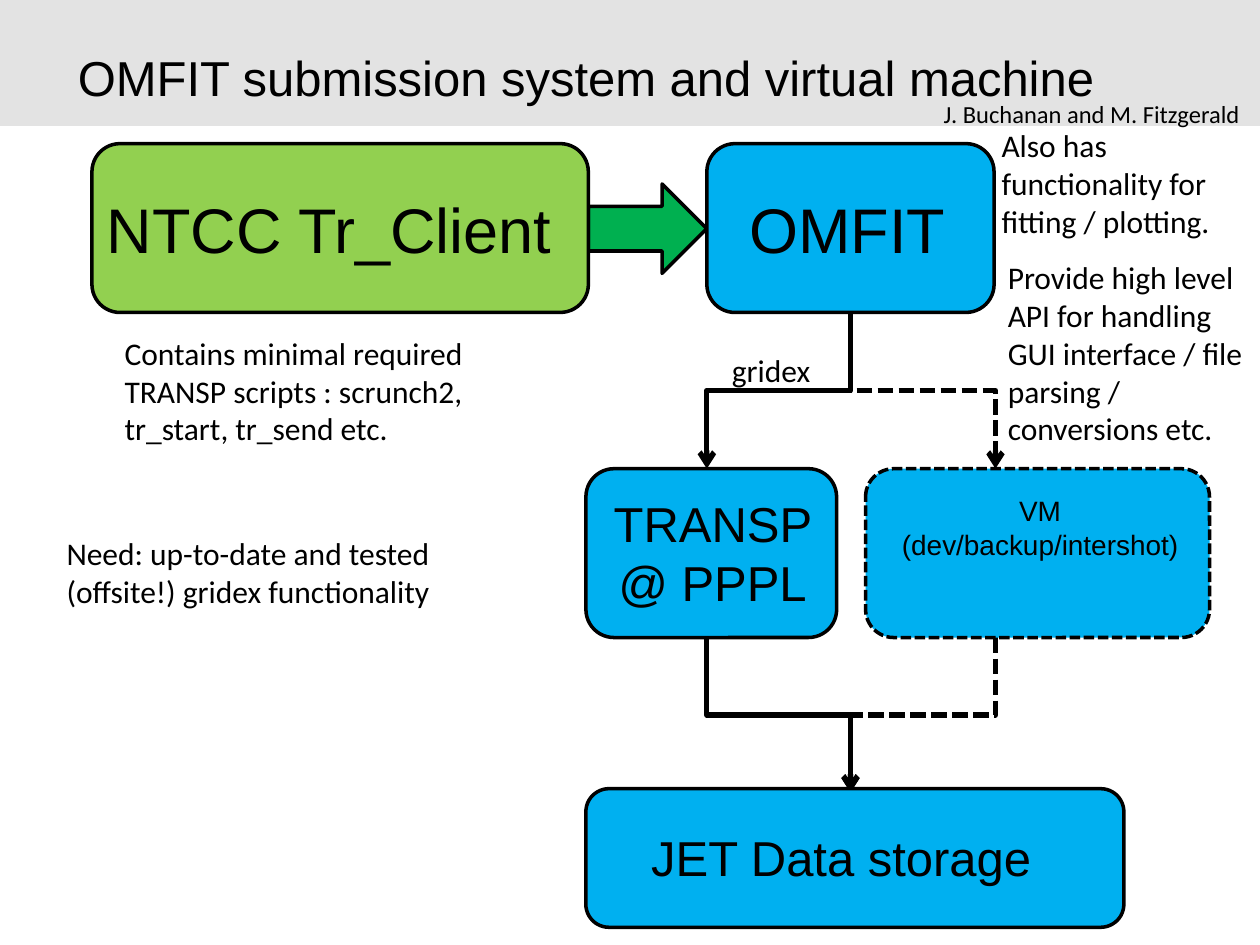
from lxml import etree
from pptx import Presentation
from pptx.dml.color import RGBColor
from pptx.enum.dml import MSO_LINE
from pptx.enum.shapes import MSO_CONNECTOR, MSO_SHAPE
from pptx.enum.text import MSO_ANCHOR, PP_ALIGN
from pptx.oxml.ns import qn
from pptx.util import Inches, Pt

BLACK = RGBColor(0x00, 0x00, 0x00)
GREY = RGBColor(0xE3, 0xE3, 0xE3)
BLUE = RGBColor(0x00, 0xB0, 0xF0)
LIME = RGBColor(0x92, 0xD0, 0x50)
GREEN = RGBColor(0x00, 0xB0, 0x50)
RECT, ROUNDED, ARROW = MSO_SHAPE.RECTANGLE, MSO_SHAPE.ROUNDED_RECTANGLE, MSO_SHAPE.RIGHT_ARROW
ELBOW, DASH = MSO_CONNECTOR.ELBOW, MSO_LINE.SQUARE_DOT
LEFT, CENTER = PP_ALIGN.LEFT, PP_ALIGN.CENTER
TOP, MIDDLE = MSO_ANCHOR.TOP, MSO_ANCHOR.MIDDLE

TITLE = ("OMFIT submission system and virtual machine", (0.52, 0, 9, 1.25))

# Flow steps: shape, box (left, top, width, height), fill, dashed outline
STEPS = [
    (ARROW, (4.67, 1.46, 0.94, 0.71), GREEN, False),
    (ROUNDED, (5.61, 1.14, 2.28, 1.34), BLUE, False),
    (ROUNDED, (0.73, 1.14, 3.94, 1.34), LIME, False),
    (ROUNDED, (4.65, 3.72, 1.99, 1.34), BLUE, False),
    (ROUNDED, (6.87, 3.72, 2.73, 1.34), BLUE, True),
    (ROUNDED, (4.65, 6.26, 4.27, 1.1), BLUE, False),
]

# Step labels: text, box, size, alignment
LABELS = [
    ("OMFIT", (5.85, 1.46, 1.81, 0.71), 36, LEFT),
    ("NTCC Tr_Client", (0.75, 1.46, 3.9, 0.71), 36, LEFT),
    ("TRANSP @ PPPL", (4.75, 3.87, 1.81, 1.04), 28, CENTER),
    ("VM (dev/backup/intershot)", (6.99, 3.87, 2.53, 0.64), 16, CENTER),
    ("JET Data storage", (5.07, 6.52, 3.39, 0.57), 28, LEFT),
]

# Side notes: text, box, size, wrap
NOTES = [
    ("Provide high level API for handling GUI interface / file parsing / conversions etc.",
     (7.9, 2, 2.13, 1.62), 18, True),
    ("Contains minimal required TRANSP scripts : scrunch2, tr_start, tr_send etc.",
     (0.89, 2.6, 3.62, 1.01), 18, True),
    ("Also has functionality for fitting / plotting.", (7.85, 0.95, 2.01, 1.31), 18, True),
    ("gridex", (5.71, 2.74, 0.88, 0.4), 18, False),
    ("Need: up-to-date and tested (offsite!) gridex functionality",
     (0.43, 4.19, 3.54, 0.71), 18, True),
    ("J. Buchanan and M. Fitzgerald", (7.39, 0.74, 2.57, 0.34), 14, False),
]

# Flow lines: start, end, dashed
TRANSP_X, HUB_X, VM_X = 5.61, 6.75, 7.9
FLOWS = [
    ((HUB_X, 2.48), (TRANSP_X, 3.72), False),
    ((HUB_X, 2.48), (VM_X, 3.72), True),
    ((TRANSP_X, 5.06), (HUB_X, 6.29), False),
    ((VM_X, 5.06), (HUB_X, 6.29), True),
]


def add_block(slide, preset, box, fill, outline=True, dashed=False):
    block = slide.shapes.add_shape(preset, *map(Inches, box))
    block.shadow.inherit = False
    block.fill.solid()
    block.fill.fore_color.rgb = fill
    if not outline:
        block.line.fill.background()
        return
    block.line.color.rgb = BLACK
    block.line.width = Pt(2)
    if dashed:
        block.line.dash_style = DASH


def add_text(slide, text, box, size, font, align=LEFT, wrap=True, anchor=TOP):
    frame = slide.shapes.add_textbox(*map(Inches, box)).text_frame
    frame.word_wrap = wrap
    frame.vertical_anchor = anchor
    frame.text = text
    paragraph = frame.paragraphs[0]
    paragraph.alignment = align
    paragraph.font.size = Pt(size)
    paragraph.font.name = font
    paragraph.font.color.rgb = BLACK
    return paragraph


def add_flow(slide, start, end, dashed):
    """Elbow that leaves downwards: a horizontal elbow turned a quarter."""
    (x1, y1), (x2, y2) = start, end
    length, spread = y2 - y1, abs(x2 - x1)
    mid_x, mid_y = (x1 + x2) / 2, (y1 + y2) / 2
    ends = [mid_x - length / 2, mid_x + length / 2]
    if x2 > x1:
        ends.reverse()
    flow = slide.shapes.add_connector(
        ELBOW, Inches(ends[0]), Inches(mid_y - spread / 2),
        Inches(ends[1]), Inches(mid_y + spread / 2))
    flow.line.color.rgb = BLACK
    flow.line.width = Pt(3)
    if dashed:
        flow.line.dash_style = DASH
    properties = flow._element.spPr
    quarter_turns = 3 if x2 > x1 else 1
    properties.find(qn("a:xfrm")).set("rot", str(quarter_turns * 90 * 60000))
    etree.SubElement(properties.find(qn("a:ln")), qn("a:tailEnd"), type="arrow")
    etree.SubElement(properties, qn("a:effectLst"))


def main():
    deck = Presentation()
    deck.slide_width, deck.slide_height = Inches(10), Inches(7.5)
    slide = deck.slides.add_slide(deck.slide_layouts[6])

    # Header band and title
    add_block(slide, RECT, (0, 0, 10, 1), GREY, outline=False)
    title = add_text(slide, *TITLE, 28, "Arial", anchor=MIDDLE)
    title.line_spacing = Pt(32)

    # Flow chart
    for flow in FLOWS:
        add_flow(slide, *flow)
    for preset, box, fill, dashed in STEPS:
        add_block(slide, preset, box, fill, dashed=dashed)
    for text, box, size, align in LABELS:
        add_text(slide, text, box, size, "Arial", align)

    # Notes around the chart
    for text, box, size, wrap in NOTES:
        add_text(slide, text, box, size, "Calibri", wrap=wrap)

    deck.save("out.pptx")


if __name__ == "__main__":
    main()
